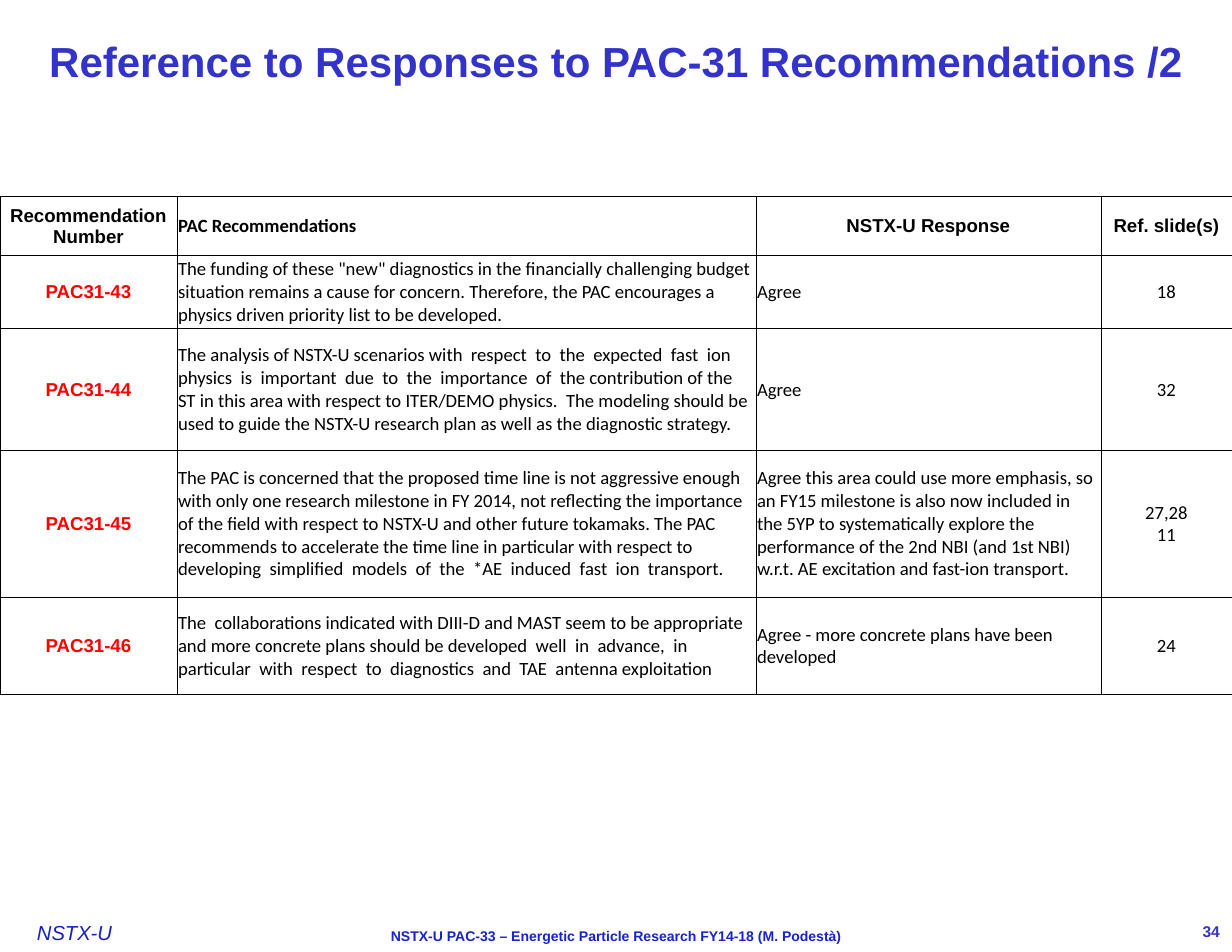
"""Build the slide listing responses to the PAC-31 recommendations."""
from lxml import etree
from pptx import Presentation, util as u
from pptx.dml.color import RGBColor
from pptx.enum import text
from pptx.oxml.ns import qn

COLORS = {"title": "3333CC", "brand": "171FC7", "footer": "1822CD",
          "number": "FF0000", "body": "000000", "border": "000000"}
LEFT, CENTER, RIGHT = text.PP_ALIGN.LEFT, text.PP_ALIGN.CENTER, text.PP_ALIGN.RIGHT
MIDDLE, TOP = text.MSO_ANCHOR.MIDDLE, text.MSO_ANCHOR.TOP


def write(frame, content, size, color, align=LEFT, name="Arial", bold=False, italic=False):
    frame.text = content
    frame.word_wrap = True
    for paragraph in frame.paragraphs:
        paragraph.alignment = align
        font = paragraph.font
        font.name, font.size, font.bold, font.italic = name, u.Pt(size), bold, italic
        font.color.rgb = RGBColor.from_string(COLORS[color])


def add_borders(cell):
    properties = cell._tc.get_or_add_tcPr()
    for index, side in enumerate(("lnL", "lnR", "lnT", "lnB")):
        line = etree.Element(qn(f"a:{side}"), w=str(u.Pt(0.5)))
        fill = etree.SubElement(line, qn("a:solidFill"))
        etree.SubElement(fill, qn("a:srgbClr"), val=COLORS["border"])
        properties.insert(index, line)


presentation = Presentation()
presentation.slide_width, presentation.slide_height = u.Inches(11), u.Inches(8.5)
slide = presentation.slides.add_slide(presentation.slide_layouts[5])

title = slide.shapes.title
title.left, title.top, title.width, title.height = (u.Inches(v) for v in (0, 0, 11, 1.09))
title.text_frame.auto_size = text.MSO_AUTO_SIZE.NONE
title.text_frame.vertical_anchor = MIDDLE
write(title.text_frame, "Reference to Responses to PAC-31 Recommendations /2",
      27, "title", CENTER, bold=True)

footers = [
    ("NSTX-U", (0.33, 8.22, 0.95, 0.22), (0, 0), TOP, (13, "brand", LEFT, "Arial", False, True)),
    ("NSTX-U PAC-33 – Energetic Particle Research FY14-18 (M. Podestà)",
     (2.2, 8.22, 6.6, 0.42), (0.11, 0.06), TOP, (9, "footer", CENTER, "Arial", True)),
    ("34", (10.08, 8.22, 0.92, 0.19), (0.11, 0.06), MIDDLE, (10, "title", RIGHT, "Arial", True)),
]
for content, place, (side, edge), anchor, style in footers:
    frame = slide.shapes.add_textbox(*(u.Inches(v) for v in place)).text_frame
    frame.margin_left = frame.margin_right = u.Inches(side)
    frame.margin_top = frame.margin_bottom = u.Inches(edge)
    frame.vertical_anchor = anchor
    write(frame, content, *style)

rows = [
    ("Recommendation Number", "PAC Recommendations", "NSTX-U Response", "Ref. slide(s)"),
    ("PAC31-43",
     'The funding of these "new" diagnostics in the financially challenging budget situation '
     "remains a cause for concern. Therefore, the PAC encourages a physics driven priority list "
     "to be developed.",
     "Agree", "18"),
    ("PAC31-44",
     "The analysis of NSTX-U scenarios with  respect  to  the  expected  fast  ion  physics  is  "
     "important  due  to  the  importance  of  the contribution of the ST in this area with "
     "respect to ITER/DEMO physics.  The modeling should be used to guide the NSTX-U research "
     "plan as well as the diagnostic strategy.",
     "Agree", "32"),
    ("PAC31-45",
     "The PAC is concerned that the proposed time line is not aggressive enough with only one "
     "research milestone in FY 2014, not reflecting the importance of the field with respect to "
     "NSTX-U and other future tokamaks. The PAC recommends to accelerate the time line in "
     "particular with respect to developing  simplified  models  of  the  *AE  induced  fast  "
     "ion  transport.",
     "Agree this area could use more emphasis, so an FY15 milestone is also now included in the "
     "5YP to systematically explore the performance of the 2nd NBI (and 1st NBI) w.r.t. AE "
     "excitation and fast-ion transport.",
     "27,28\n11"),
    ("PAC31-46",
     "The  collaborations indicated with DIII-D and MAST seem to be appropriate and more concrete "
     "plans should be developed  well  in  advance,  in  particular  with  respect  to  "
     "diagnostics  and  TAE  antenna exploitation",
     "Agree - more concrete plans have been developed", "24"),
]
column_widths = (1.58, 5.17, 3.08, 1.17)
row_heights = (0.53, 0.65, 1.09, 1.31, 0.87)
table = slide.shapes.add_table(len(rows), len(column_widths), u.Inches(0), u.Inches(1.75),
                               u.Inches(11), u.Inches(sum(row_heights))).table
table.first_row = table.horz_banding = False
for column, width in zip(table.columns, column_widths):
    column.width = u.Inches(width)
for row, height in zip(table.rows, row_heights):
    row.height = u.Inches(height)

for row_index, row in enumerate(rows):
    for column_index, content in enumerate(row):
        cell = table.cell(row_index, column_index)
        cell.margin_left = cell.margin_right = cell.margin_top = u.Inches(0.01)
        cell.margin_bottom = 0
        cell.vertical_anchor = MIDDLE
        cell.fill.background()
        add_borders(cell)
        header, number = row_index == 0, column_index == 0
        centered = column_index in (0, 3) or (header and column_index == 2)
        arial = number or (header and column_index != 1)
        write(cell.text_frame, content, 12, "number" if number and not header else "body",
              CENTER if centered else LEFT, "Arial" if arial else "Calibri", header or number)

presentation.save("out.pptx")
